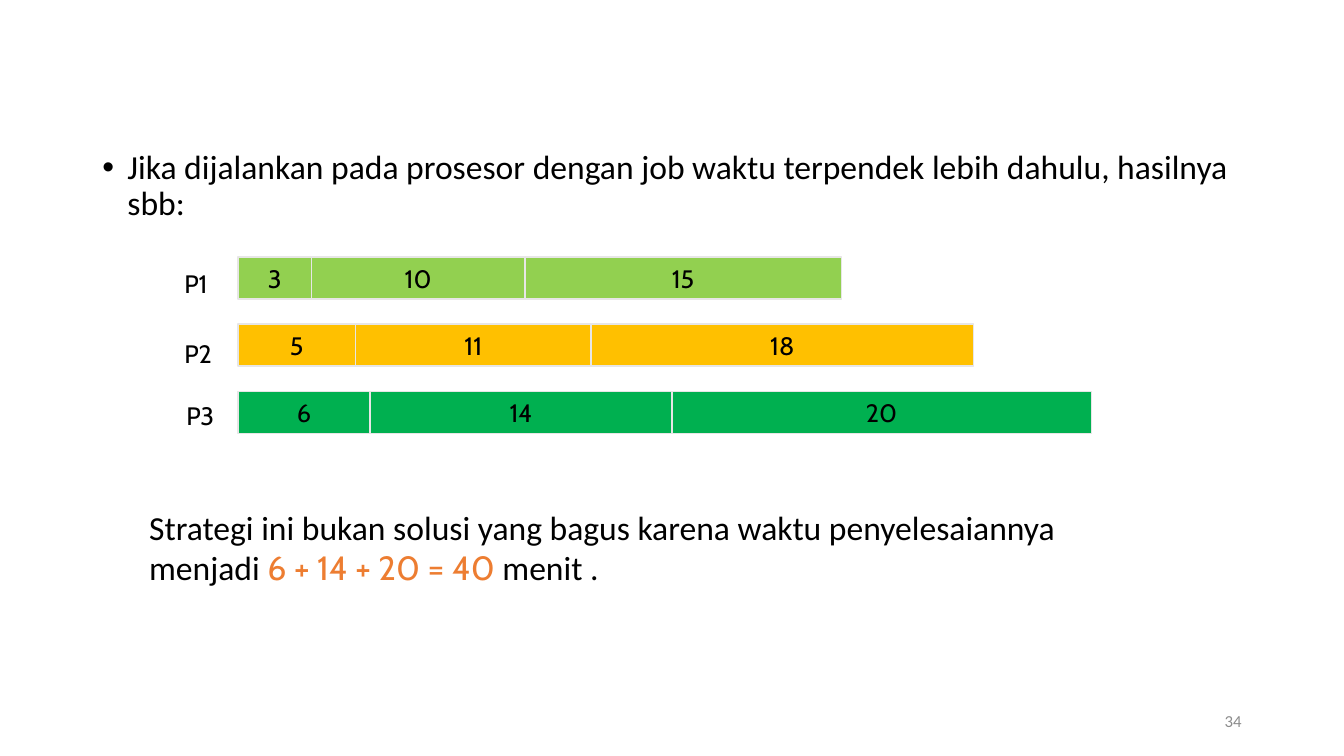
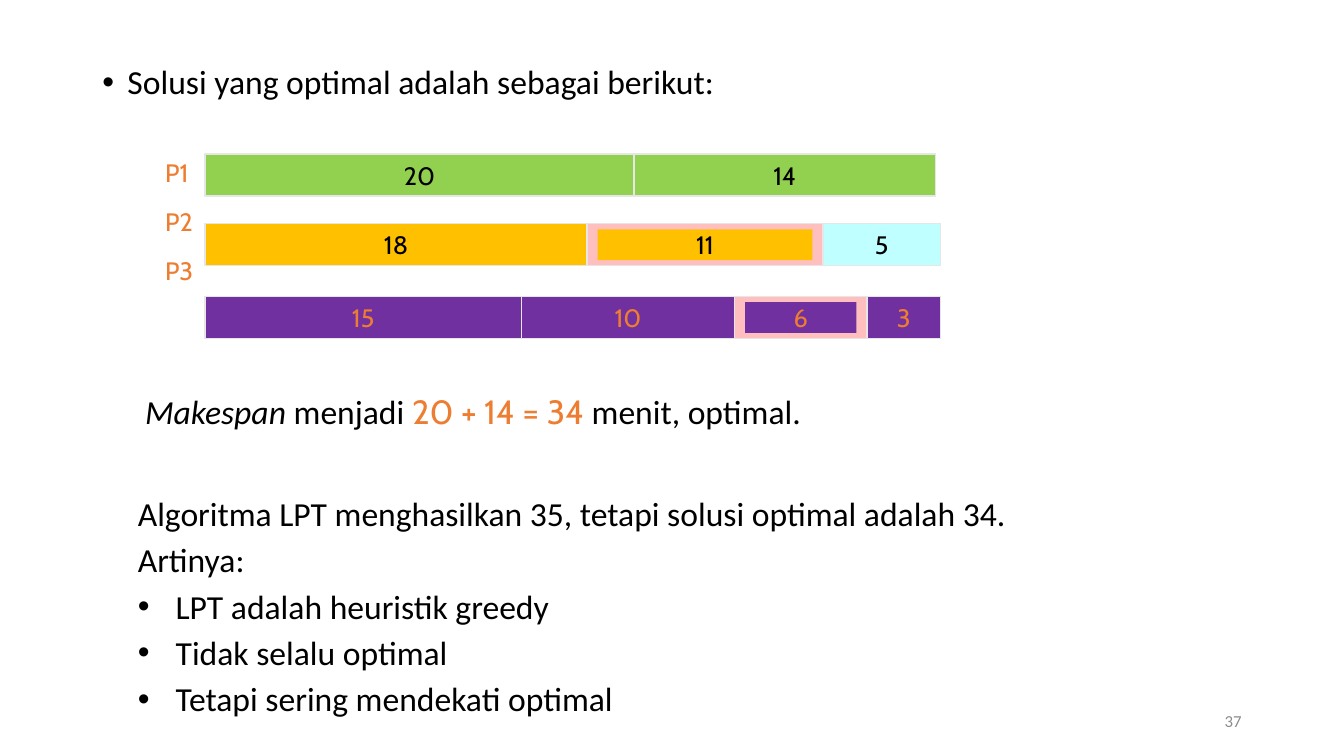
from lxml.etree import SubElement
from pptx import Presentation
from pptx.dml.color import RGBColor
from pptx.enum.shapes import MSO_SHAPE as Shape
from pptx.enum.text import MSO_ANCHOR as Anchor, PP_ALIGN as Align
from pptx.oxml.ns import qn
from pptx.util import Pt

BLACK = RGBColor(0x00, 0x00, 0x00)
ORANGE = RGBColor(0xED, 0x7D, 0x31)
GRAY = RGBColor(0x8C, 0x8C, 0x8C)
OUTLINE = RGBColor(0xE7, 0xE6, 0xE6)
LIME = RGBColor(0x92, 0xD0, 0x50)
AMBER = RGBColor(0xFF, 0xC0, 0x00)
GREEN = RGBColor(0x00, 0xB0, 0x50)
PURPLE = RGBColor(0x70, 0x30, 0xA0)
PINK = RGBColor(0xFF, 0xBF, 0xBF)
AQUA = RGBColor(0xBF, 0xFF, 0xFF)

BODY, NUMERIC = "Calibri", "Cabin"
PLAIN = (BODY, BLACK, False)
ITALIC = (BODY, BLACK, True)
RESULT = (NUMERIC, ORANGE, False)

BAR_HEIGHT = 30
INSET_X, INSET_Y = 7.5, 4
JOB_WIDTHS = {3: 52.6, 5: 84, 6: 94.5, 10: 152.4, 11: 168.4,
              14: 215.6, 15: 226, 18: 273, 20: 299.5}

SLIDES = [
    {
        "number": "34",
        "lead": (104, "Jika dijalankan pada prosesor dengan job waktu terpendek "
                      "lebih dahulu, hasilnya sbb:"),
        "left": 169.9,
        "widths": JOB_WIDTHS,
        "rows": [
            (183.7, LIME, BLACK, [3, 10, 15]),
            (231.6, AMBER, BLACK, [5, 11, 18]),
            (279.5, GREEN, BLACK, [6, 14, 20]),
        ],
        "framed": [],
        "fills": {},
        "labels": [(124.6, 183.6, ["P1"]), (124.6, 234, ["P2"]), (126, 278, ["P3"])],
        "label_color": BLACK,
        "result": (99.4, 358.6, [
            ("Strategi ini bukan solusi yang bagus karena waktu penyelesaiannya menjadi ", PLAIN),
            ("6 + 14 + 20 = 40 ", RESULT),
            ("menit .", PLAIN),
        ]),
        "conclusion": [],
    },
    {
        "number": "37",
        "lead": (43.2, "Solusi yang optimal adalah sebagai berikut:"),
        "left": 146.4,
        "widths": {**JOB_WIDTHS, 20: 306.4},
        "rows": [
            (110, LIME, BLACK, [20, 14]),
            (159.8, AMBER, BLACK, [18, 11, 5]),
            (211.8, PURPLE, ORANGE, [15, 10, 6, 3]),
        ],
        "framed": [11, 6],
        "fills": {5: AQUA},
        "labels": [(110.9, 104.4, ["P1", "P2", "P3"])],
        "label_color": ORANGE,
        "result": (96.5, 275.8, [
            ("Makespan ", ITALIC),
            ("menjadi ", PLAIN),
            ("20 + 14 = 34 ", RESULT),
            ("menit, optimal.", PLAIN),
        ]),
        "conclusion": [
            ("Algoritma LPT menghasilkan 35, tetapi solusi optimal adalah 34.", False),
            ("Artinya:", False),
            ("LPT adalah heuristik greedy", True),
            ("Tidak selalu optimal", True),
            ("Tetapi sering mendekati optimal", True),
        ],
    },
]


def set_font(font, name, size, color, italic=False):
    """Set the typeface, size, colour and slant of a font."""
    font.name = name
    font.size = Pt(size)
    font.color.rgb = color
    font.italic = italic


def add_bullet(paragraph, indent):
    """Give a paragraph a hanging round bullet."""
    properties = paragraph._p.get_or_add_pPr()
    properties.set("marL", str(Pt(indent)))
    properties.set("indent", str(Pt(-indent)))
    SubElement(properties, qn("a:buFont")).set("typeface", "Arial")
    SubElement(properties, qn("a:buChar")).set("char", "•")


def add_text_box(slide, left, top, width, height):
    """Add a wrapping text box and return its frame."""
    frame = slide.shapes.add_textbox(Pt(left), Pt(top), Pt(width), Pt(height)).text_frame
    frame.word_wrap = True
    return frame


def add_paragraph(frame, index, text):
    """Return the paragraph at the end of the frame, holding the text."""
    paragraph = frame.add_paragraph() if index else frame.paragraphs[0]
    paragraph.text = text
    return paragraph


def add_bar(slide, left, top, width, height, fill, outline=None):
    """Add a plain rectangle."""
    bar = slide.shapes.add_shape(Shape.RECTANGLE, Pt(left), Pt(top), Pt(width), Pt(height))
    bar.shadow.inherit = False
    bar.fill.solid()
    bar.fill.fore_color.rgb = fill
    if outline is None:
        bar.line.fill.background()
    else:
        bar.line.color.rgb = outline
        bar.line.width = Pt(1)
    return bar


def add_job(slide, job, left, top, width, fill, color, framed):
    """Add one job of the schedule, with a pink frame if asked."""
    bar = add_bar(slide, left, top, width, BAR_HEIGHT, PINK if framed else fill, OUTLINE)
    if framed:
        bar = add_bar(slide, left + INSET_X, top + INSET_Y,
                      width - 2 * INSET_X, BAR_HEIGHT - 2 * INSET_Y, fill)
    frame = bar.text_frame
    frame.word_wrap = False
    frame.vertical_anchor = Anchor.MIDDLE
    paragraph = add_paragraph(frame, 0, str(job))
    paragraph.alignment = Align.CENTER
    set_font(paragraph.font, NUMERIC, 18, color)


def add_schedule(slide, content):
    """Add the rows of jobs and the processor labels."""
    for top, fill, color, jobs in content["rows"]:
        left = content["left"]
        for job in jobs:
            width = content["widths"][job]
            add_job(slide, job, left, top, width, content["fills"].get(job, fill),
                    color, job in content["framed"])
            left += width
    for left, top, names in content["labels"]:
        frame = add_text_box(slide, left, top, 47.5, 31 + 35 * (len(names) - 1))
        for index, name in enumerate(names):
            paragraph = add_paragraph(frame, index, name)
            paragraph.line_spacing = 1.2
            paragraph.space_before = Pt(9 if index else 0)
            set_font(paragraph.font, NUMERIC, 18, content["label_color"])


def add_slide(presentation, content):
    """Add one slide with its lead, schedule, result and conclusion."""
    slide = presentation.slides.add_slide(presentation.slide_layouts[6])

    top, text = content["lead"]
    lead = add_paragraph(add_text_box(slide, 66, top, 828, 64), 0, text)
    add_bullet(lead, 18)
    lead.line_spacing = 0.9
    set_font(lead.font, BODY, 24, BLACK)

    add_schedule(slide, content)

    left, top, runs = content["result"]
    result = add_text_box(slide, left, top, 680, 36).paragraphs[0]
    for text, (name, color, italic) in runs:
        run = result.add_run()
        run.text = text
        set_font(run.font, name, 24, color, italic)

    if content["conclusion"]:
        frame = add_text_box(slide, 91.4, 344.2, 813.6, 176)
        for index, (text, bulleted) in enumerate(content["conclusion"]):
            paragraph = add_paragraph(frame, index, text)
            if bulleted:
                add_bullet(paragraph, 27)
            paragraph.line_spacing = 1.15
            set_font(paragraph.font, BODY, 24, BLACK)

    frame = add_text_box(slide, 678, 500.4, 216, 28.8)
    frame.vertical_anchor = Anchor.MIDDLE
    number = add_paragraph(frame, 0, content["number"])
    number.alignment = Align.RIGHT
    set_font(number.font, BODY, 12, GRAY)


def main():
    """Build and save the presentation."""
    presentation = Presentation()
    presentation.slide_width = Pt(960)
    presentation.slide_height = Pt(540)
    for content in SLIDES:
        add_slide(presentation, content)
    presentation.save("out.pptx")


if __name__ == "__main__":
    main()
